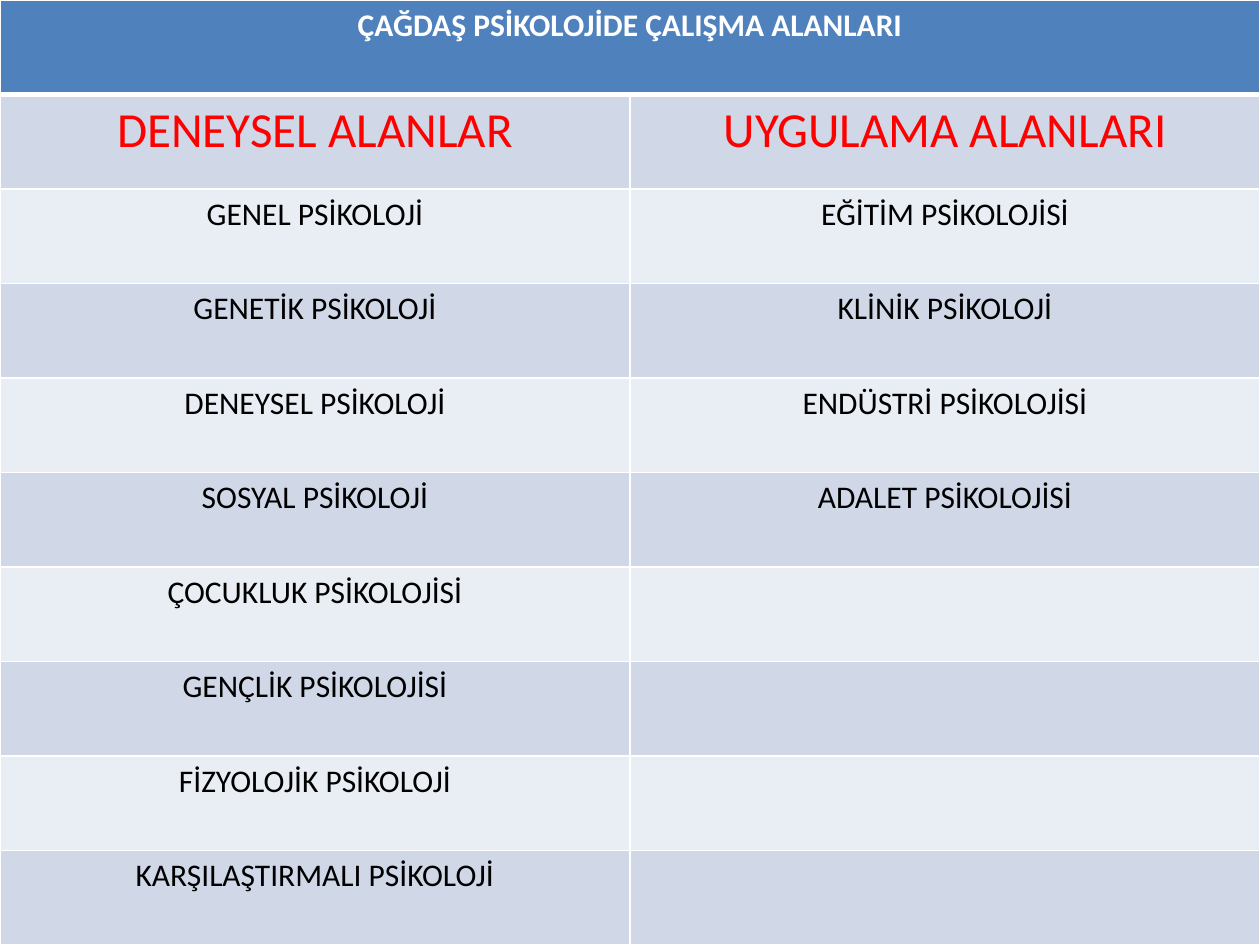
"""Build a slide with a two-column table of the fields of modern psychology."""
from dataclasses import dataclass
from itertools import zip_longest

from lxml.etree import SubElement
from pptx import Presentation
from pptx.dml.color import RGBColor as Rgb
from pptx.enum.text import PP_ALIGN as Align
from pptx.oxml.ns import qn
from pptx.table import Table, _Cell as Cell
from pptx.util import Inches, Pt

COLORS = {
    "header": "4F81BD",
    "dark_band": "D0D8E8",
    "light_band": "E9EDF4",
    "border": "FFFFFF",
    "title": "FFFFFF",
    "heading": "FF0000",
    "body": "000000",
}
TITLE = "ÇAĞDAŞ PSİKOLOJİDE ÇALIŞMA ALANLARI"
HEADINGS = ("DENEYSEL ALANLAR", "UYGULAMA ALANLARI")
EXPERIMENTAL = (
    "GENEL PSİKOLOJİ",
    "GENETİK PSİKOLOJİ",
    "DENEYSEL PSİKOLOJİ",
    "SOSYAL PSİKOLOJİ",
    "ÇOCUKLUK PSİKOLOJİSİ",
    "GENÇLİK PSİKOLOJİSİ",
    "FİZYOLOJİK PSİKOLOJİ",
    "KARŞILAŞTIRMALI PSİKOLOJİ",
)
APPLIED = (
    "EĞİTİM PSİKOLOJİSİ",
    "KLİNİK PSİKOLOJİ",
    "ENDÜSTRİ PSİKOLOJİSİ",
    "ADALET PSİKOLOJİSİ",
)


@dataclass(frozen=True)
class RowStyle:
    """Look of the cells in one table row."""

    fill: str
    color: str
    size: int = 18
    bold: bool = False
    top: int = 1
    bottom: int = 1


@dataclass(frozen=True)
class FieldRow:
    """Texts of one table row and their look."""

    texts: tuple[str, ...]
    style: RowStyle


def set_borders(cell: Cell, style: RowStyle) -> None:
    """Draw the four borders of a cell."""
    properties = cell._tc.get_or_add_tcPr()
    widths = {"lnL": 1, "lnR": 1, "lnT": style.top, "lnB": style.bottom}
    for tag, width in widths.items():
        line = SubElement(properties, qn(f"a:{tag}"), w=str(Pt(width)))
        fill = SubElement(line, qn("a:solidFill"))
        SubElement(fill, qn("a:srgbClr"), val=COLORS["border"])


def fill_cell(cell: Cell, text: str, style: RowStyle) -> None:
    """Format a cell and write its centred text."""
    set_borders(cell, style)
    cell.fill.solid()
    cell.fill.fore_color.rgb = Rgb.from_string(COLORS[style.fill])
    para = cell.text_frame.paragraphs[0]
    para.alignment = Align.CENTER
    if text:
        span = para.add_run()
        span.text = text
        formats = {"name": "Calibri", "size": Pt(style.size), "bold": style.bold}
        for name, value in formats.items():
            setattr(span.font, name, value)
        span.font.color.rgb = Rgb.from_string(COLORS[style.color])


def fill_table(table: Table, rows: list[FieldRow]) -> None:
    """Write every row into the table."""
    for index, row in enumerate(rows):
        for column, text in enumerate(row.texts):
            fill_cell(table.cell(index, column), text, row.style)
    table.cell(0, 0).merge(table.cell(0, 1))


def list_rows() -> list[FieldRow]:
    """Return the title, heading and banded field rows."""
    rows = [
        FieldRow((TITLE, ""), RowStyle("header", "title", bold=True, bottom=3)),
        FieldRow(HEADINGS, RowStyle("dark_band", "heading", size=28, top=3)),
    ]
    bands = ("light_band", "dark_band")
    for index, texts in enumerate(zip_longest(EXPERIMENTAL, APPLIED, fillvalue="")):
        rows.append(FieldRow(texts, RowStyle(bands[index % 2], "body")))
    return rows


def main() -> None:
    """Create the deck and save it."""
    deck = Presentation()
    deck.slide_width, deck.slide_height = Inches(10), Inches(7.5)
    page = deck.slides.add_slide(deck.slide_layouts[6])
    rows = list_rows()
    frame = page.shapes.add_table(
        len(rows), len(HEADINGS), Inches(0), Inches(0), Inches(10), Inches(7.5)
    )
    fill_table(frame.table, rows)
    deck.save("out.pptx")


if __name__ == "__main__":
    main()
